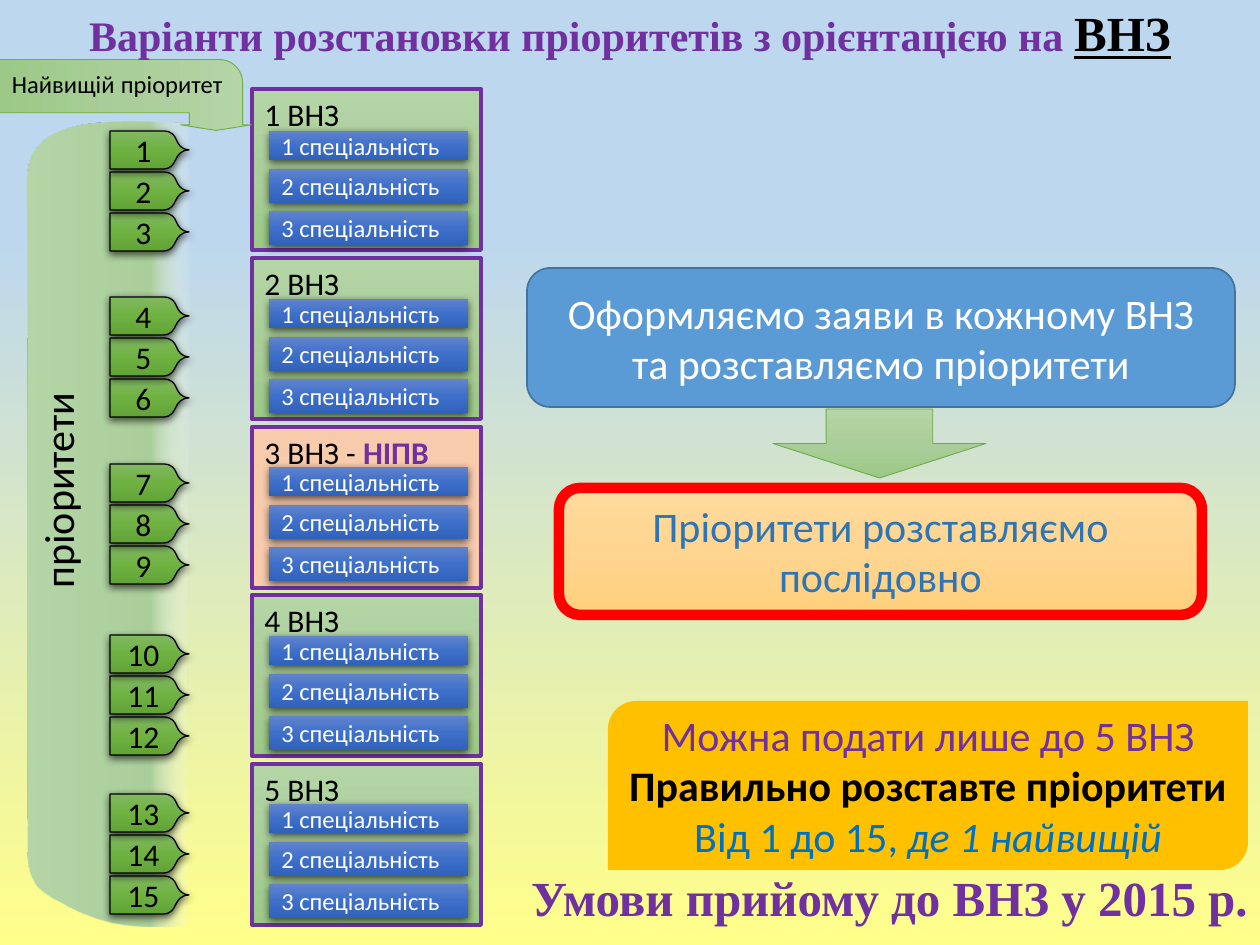
from collections import namedtuple

from lxml import etree
from pptx import Presentation
from pptx import util as u
from pptx.dml.color import RGBColor
from pptx.enum import shapes, text
from pptx.oxml.ns import qn

SCALE = 914400 / 126
COLORS = {
    "sky": "BDD7EE", "lemon": "FFFF8A", "purple": "7030A0", "black": "000000",
    "white": "FFFFFF", "peach": "F8CBAD", "gold": "FFC000", "blue": "5B9BD5",
    "navy": "43739E", "red": "FF0000", "steel": "2E75B6", "azure": "0070C0", "leaf": "70AD47",
    "green1": "B5D5A7", "green2": "AACE9A", "green3": "9CC987",
    "blue1": "6183CB", "blue2": "3E70CA", "blue3": "3062BB",
    "tag1": "81B861", "tag2": "6FB242", "tag3": "62A336",
    "sand1": "FFDB9E", "sand2": "FFD590", "sand3": "FFD07C",
}
Box = namedtuple("Box", "left top width height")
Stop = namedtuple("Stop", "position color alpha", defaults=(100,))
Style = namedtuple("Style", "fill stops angle line width shadow",
                   defaults=(None, (), 90, None, 0, False))
Run = namedtuple("Run", "words size color bold italic underline font",
                 defaults=("black", False, False, False, "Calibri"))

def three_stops(name: str) -> tuple:
    return tuple(Stop(50 * i, f"{name}{i + 1}") for i in range(3))

GREEN = Style(stops=three_stops("green"), line="leaf", width=0.5)
UNIVERSITY = GREEN._replace(line="purple", width=2.25)
HOME = Style(fill="peach", line="purple", width=2.25)
SPECIALTY = Style(stops=three_stops("blue"), shadow=True)
TAG = Style(stops=three_stops("tag"), line="black", width=0.75, shadow=True)
BAND = Style(stops=(Stop(0, "green1"), Stop(74, "green2"), Stop(100, "white", 0)), angle=0)
SAND = Style(stops=three_stops("sand"), line="red", width=6)
TAG_OUTLINE = [(0, 0), (54, 0), (71, 1, 62, 17, 79, 19), (62, 20, 69, 37, 54, 38), (0, 38)]
BAND_OUTLINE = [
    (188, 123), (147, 122, 92, 118, 64, 130), (38, 140, 27, 154, 27, 186),
    (29, 307, 28, 730, 28, 849), (28, 887, 43, 893, 77, 910),
    (103, 922, 130, 930, 186, 925), (183, 658, 192, 391, 188, 123),
]
TAG_TOPS = (131, 297, 464, 635, 794)
SPECIALTY_ROWS = ((131, 29), (169, 34), (211, 34))

def px(value: float) -> int:
    return round(value * SCALE)

def rgb(name: str) -> RGBColor:
    return RGBColor.from_string(COLORS[name])

def add_color(parent, name: str, alpha: int = 100) -> None:
    color = etree.SubElement(parent, qn("a:srgbClr"), val=COLORS[name])
    if alpha < 100:
        etree.SubElement(color, qn("a:alpha"), val=str(alpha * 1000))

def set_gradient(fill, properties, stops: tuple, angle: int) -> None:
    fill.solid()
    gradient = etree.Element(qn("a:gradFill"), rotWithShape="1")
    stop_list = etree.SubElement(gradient, qn("a:gsLst"))
    for stop in stops:
        item = etree.SubElement(stop_list, qn("a:gs"), pos=str(stop.position * 1000))
        add_color(item, stop.color, stop.alpha)
    etree.SubElement(gradient, qn("a:lin"), ang=str(angle * 60000), scaled="0")
    properties.replace(properties.find(qn("a:solidFill")), gradient)

def apply_style(shape, style: Style) -> None:
    shape.shadow.inherit = False
    properties = shape.element.spPr
    if style.stops:
        set_gradient(shape.fill, properties, style.stops, style.angle)
    else:
        shape.fill.solid()
        shape.fill.fore_color.rgb = rgb(style.fill)
    if style.line:
        shape.line.color.rgb = rgb(style.line)
        shape.line.width = u.Pt(style.width)
    else:
        shape.line.fill.background()
    if style.shadow:
        shadow = etree.SubElement(properties.find(qn("a:effectLst")), qn("a:outerShdw"),
                                  blurRad="57150", dist="19050", dir="5400000",
                                  algn="ctr", rotWithShape="0")
        add_color(shadow, "black", 63)

def write(shape, paragraphs: list, align: str = "CENTER", anchor: str = "MIDDLE",
          spacing: float = 1.0, wrap: bool = True, margins: tuple = (0.1, 0.05, 0.1, 0.05)) -> None:
    frame = shape.text_frame
    frame.word_wrap = wrap
    frame.vertical_anchor = text.MSO_ANCHOR[anchor]
    (frame.margin_left, frame.margin_top,
     frame.margin_right, frame.margin_bottom) = map(u.Inches, margins)
    for index, runs in enumerate(paragraphs):
        paragraph = frame.add_paragraph() if index else frame.paragraphs[0]
        paragraph.alignment = text.PP_ALIGN[align]
        paragraph.line_spacing = spacing
        for item in runs:
            run = paragraph.add_run()
            run.text = item.words
            font = run.font
            font.name, font.size = item.font, u.Pt(item.size)
            font.bold, font.italic, font.underline = item.bold, item.italic, item.underline
            font.color.rgb = rgb(item.color)

def add_box(slide, kind: str, box: Box, style: Style):
    shape = slide.shapes.add_shape(shapes.MSO_SHAPE[kind], *map(px, box))
    apply_style(shape, style)
    return shape

def add_outline(slide, outline: list, style: Style, left: int = 0, top: int = 0):
    points = [(px(left + segment[i]), px(top + segment[i + 1]))
              for segment in outline for i in range(0, len(segment), 2)]
    builder = slide.shapes.build_freeform(*points[0])
    builder.add_line_segments(points[1:], close=True)
    shape = builder.convert_to_shape()
    lines = iter(shape.element.findall(".//" + qn("a:lnTo")))
    for segment in outline[1:]:
        line = next(lines)
        if len(segment) == 6:
            line.addprevious(curve := etree.Element(qn("a:cubicBezTo")))
            for part in (line, next(lines), next(lines)):
                curve.append(part[0])
                part.getparent().remove(part)
    apply_style(shape, style)
    return shape

def add_universities(slide) -> None:
    for index in range(5):
        name = [Run(f"{index + 1} ВНЗ", 18)]
        if index == 2:
            name = [Run("3 ВНЗ - ", 18), Run("НІПВ", 18, "purple", True)]
        card = add_box(slide, "RECTANGLE", Box(252, 89 + round(index * 168.75), 229, 161),
                       HOME if index == 2 else UNIVERSITY)
        write(card, [name], "LEFT", "TOP")
    for index in range(5):
        for number, (top, height) in enumerate(SPECIALTY_ROWS, 1):
            box = Box(269, top + round(index * 168.25), 199, height)
            row = add_box(slide, "RECTANGLE", box, SPECIALTY)
            write(row, [[Run(f"{number} спеціальність", 14, "white")]], "LEFT")

def add_advice(slide) -> None:
    limit = add_box(slide, "ROUND_2_DIAG_RECTANGLE", Box(608, 701, 640, 169), Style("gold"))
    write(limit, [[Run("Можна подати лише до 5 ВНЗ", 24, "purple")],
                  [Run("Правильно розставте пріоритети", 24, bold=True)],
                  [Run("Від 1 до 15, ", 24, "azure"),
                   Run("де 1 найвищій", 24, "azure", italic=True)]],
          anchor="TOP", margins=(0.1, 0, 0.1, 0))
    applications = add_box(slide, "ROUNDED_RECTANGLE", Box(527, 268, 708, 139),
                           Style("blue", line="navy", width=1))
    write(applications, [[Run("Оформляємо заяви в кожному ВНЗ та розставляємо пріоритети",
                              24, "white")]])
    order = add_box(slide, "ROUNDED_RECTANGLE", Box(559, 488, 643, 127), SAND)
    write(order, [[Run("Пріоритети розставляємо послідовно", 24, "steel")]], anchor="TOP")
    add_box(slide, "DOWN_ARROW", Box(773, 409, 213, 69), GREEN)

def add_priorities(slide) -> None:
    add_outline(slide, BAND_OUTLINE, BAND)
    caption = slide.shapes.add_textbox(*map(px, Box(-54, 459, 223, 63)))
    caption.rotation = 270
    write(caption, [[Run("пріоритети", 24)]], anchor="TOP", wrap=False)
    for number in reversed(range(15)):
        group, place = divmod(number, 3)
        tag = add_outline(slide, TAG_OUTLINE, TAG, 110, TAG_TOPS[group] + 41 * place)
        write(tag, [[Run(str(number + 1), 18)]], anchor="TOP", margins=(0, 0, 0.1, 0))
    arrow = add_box(slide, "BENT_ARROW", Box(90, -31, 71, 252), GREEN)
    arrow.rotation = 90
    for index, value in enumerate((0.75, 0.5, 0.08, 0.33)):
        arrow.adjustments[index] = value
    write(arrow, [[Run("Найвищій", 14), Run(" ", 16), Run("пріоритет", 14)]], "LEFT", "TOP")
    arrow.text_frame._txBody.bodyPr.set("vert", "vert270")

def main() -> None:
    presentation = Presentation()
    presentation.slide_width, presentation.slide_height = px(1260), px(945)
    slide = presentation.slides.add_slide(presentation.slide_layouts[6])
    set_gradient(slide.background.fill, slide.element.find(".//" + qn("p:bgPr")),
                 (Stop(25, "sky"), Stop(100, "lemon")), 90)
    heading = Run("Умови прийому до ВНЗ у 2015 р.", 28, "purple", True, font="Times New Roman")
    footer = slide.shapes.add_textbox(*map(px, Box(126, 856, 1134, 89)))
    write(footer, [[heading]], "RIGHT", spacing=0.9)
    add_universities(slide)
    add_advice(slide)
    add_priorities(slide)
    title = slide.shapes.add_textbox(*map(px, Box(0, -1, 1260, 74)))
    write(title, [[
        heading._replace(words="Варіанти розстановки пріоритетів з орієнтацією на ", size=24),
        heading._replace(words="ВНЗ", color="black", underline=True)]], spacing=0.9)
    presentation.save("out.pptx")

if __name__ == "__main__":
    main()
